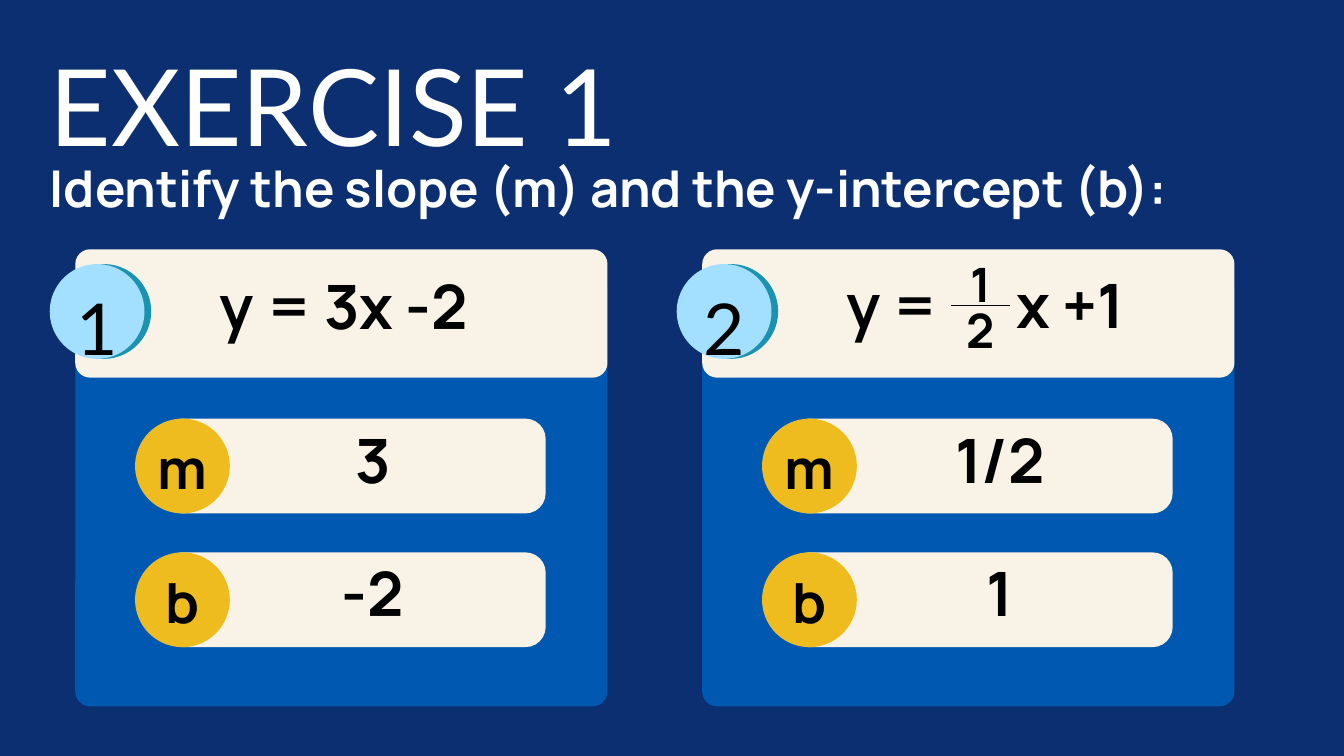
from dataclasses import dataclass

from lxml import etree
from pptx import Presentation
from pptx import util as u
from pptx.dml.color import RGBColor
from pptx.enum import shapes, text
from pptx.oxml.ns import qn


@dataclass(frozen=True)
class Theme:
    navy: str = "0B2F70"
    blue: str = "0058B0"
    cream: str = "F8F3E6"
    teal: str = "1B93B0"
    sky: str = "A3DFFF"
    gold: str = "EFBC20"
    white: str = "FFFFFF"
    black: str = "000000"
    light_font: str = "Lato"
    bold_font: str = "Manrope"
    # Each type style is (size, exact line spacing) in points.
    title: tuple = (114.2, 107.3)
    subtitle: tuple = (54.3, 53.2)
    number: tuple = (76.6, 107.2)
    math: tuple = (65.5, 64.2)
    label: tuple = (59.3, 83.1)
    fraction: tuple = (50.7, 49.7)


T = Theme()
LEFT, CENTER = text.PP_ALIGN.LEFT, text.PP_ALIGN.CENTER
ROUNDED = shapes.MSO_SHAPE.ROUNDED_RECTANGLE
OVAL = shapes.MSO_SHAPE.OVAL

CARD_LEFT, CARD_PITCH, CARD_WIDTH = 1.12, 9.33, 7.92
ROW_TOP, ROW_PITCH = 6.23, 1.99
DISC = 1.41


def add_text(s, box, lines, style, color=T.black, font=T.bold_font, align=LEFT):
    size, spacing = style
    tf = s.shapes.add_textbox(*map(u.Inches, box)).text_frame
    tf.margin_left = tf.margin_top = tf.margin_right = tf.margin_bottom = 0
    tf.word_wrap = True
    for i, line in enumerate(lines):
        p = tf.add_paragraph() if i else tf.paragraphs[0]
        p.alignment = align
        p.line_spacing = u.Pt(spacing)
        r = p.add_run()
        r.text = line
        r.font.size = u.Pt(size)
        r.font.name = font
        r.font.bold = font == T.bold_font
        r.font.color.rgb = RGBColor.from_string(color)


def add_panel(s, kind, box, color, radius=None):
    sp = s.shapes.add_shape(kind, *map(u.Inches, box))
    sp.shadow.inherit = False
    sp.fill.solid()
    sp.fill.fore_color.rgb = RGBColor.from_string(color)
    sp.line.fill.background()
    if radius:
        sp.adjustments[0] = radius / min(box[2:])


def add_fraction(s, x, top, bottom):
    add_text(s, (x, 3.95, 0.95, 1.48), [top, bottom], T.fraction, align=CENTER)
    bar = s.shapes.add_connector(
        shapes.MSO_CONNECTOR.STRAIGHT,
        *map(u.Inches, (x + 0.03, 4.54, x + 0.91, 4.54)))
    bar.line.width = u.Pt(1)
    bar.line.color.rgb = RGBColor.from_string(T.black)
    etree.SubElement(bar.element.spPr, qn("a:effectLst"))


def add_answer(s, x, y, label, value):
    add_panel(s, ROUNDED, (x + 1.29, y, 5.71, DISC), T.cream, 0.3)
    add_panel(s, OVAL, (x + 0.89, y, DISC, DISC), T.gold)
    add_text(s, (x + 1.13, y + 0.07, 0.93, 1.12), [label], T.label, align=CENTER)
    add_text(s, (x + 2.9, y + 0.25, 3.06, 1.01), [value], T.math, align=CENTER)


def add_card(s, index, slope, intercept):
    """Draw a numbered card with its answers and return its left edge."""
    x = CARD_LEFT + index * CARD_PITCH
    add_panel(s, ROUNDED, (x, 4.09, CARD_WIDTH, 6.42), T.blue, 0.22)
    add_panel(s, ROUNDED, (x, 3.71, CARD_WIDTH, 1.91), T.cream, 0.22)
    add_panel(s, OVAL, (x - 0.28, 3.93, DISC, DISC), T.teal)
    add_panel(s, OVAL, (x - 0.38, 3.93, DISC, DISC), T.sky)
    add_text(s, (x - 0.28, 4.01, 1.2, 1.4), [str(index + 1)], T.number,
             font=T.light_font, align=CENTER)
    for row, (label, value) in enumerate((("m", slope), ("b", intercept))):
        add_answer(s, x, ROW_TOP + row * ROW_PITCH, label, value)
    return x


def main():
    prs = Presentation()
    prs.slide_width, prs.slide_height = u.Inches(20), u.Inches(11.25)
    s = prs.slides.add_slide(prs.slide_layouts[6])
    s.background.fill.solid()
    s.background.fill.fore_color.rgb = RGBColor.from_string(T.navy)

    add_text(s, (0.74, 1.01, 8.65, 1.61), ["EXERCISE 1"], T.title, T.white,
             T.light_font)
    add_text(s, (0.74, 2.5, 17.82, 0.82),
             ["Identify the slope (m) and the y-intercept (b):"],
             T.subtitle, T.white)

    x = add_card(s, 0, "3", "-2")
    add_text(s, (x + 2.15, 4.2, 4.52, 1.01), ["y = 3x -2"], T.math)

    x = add_card(s, 1, "1/2", "1")
    add_text(s, (x + 2.14, 4.18, 1.47, 1.03), ["y ="], T.math)
    add_fraction(s, x + 3.67, "1", "2")
    add_text(s, (x + 4.67, 4.18, 2.02, 1.03), ["x +1"], T.math)

    prs.save("out.pptx")


if __name__ == "__main__":
    main()
